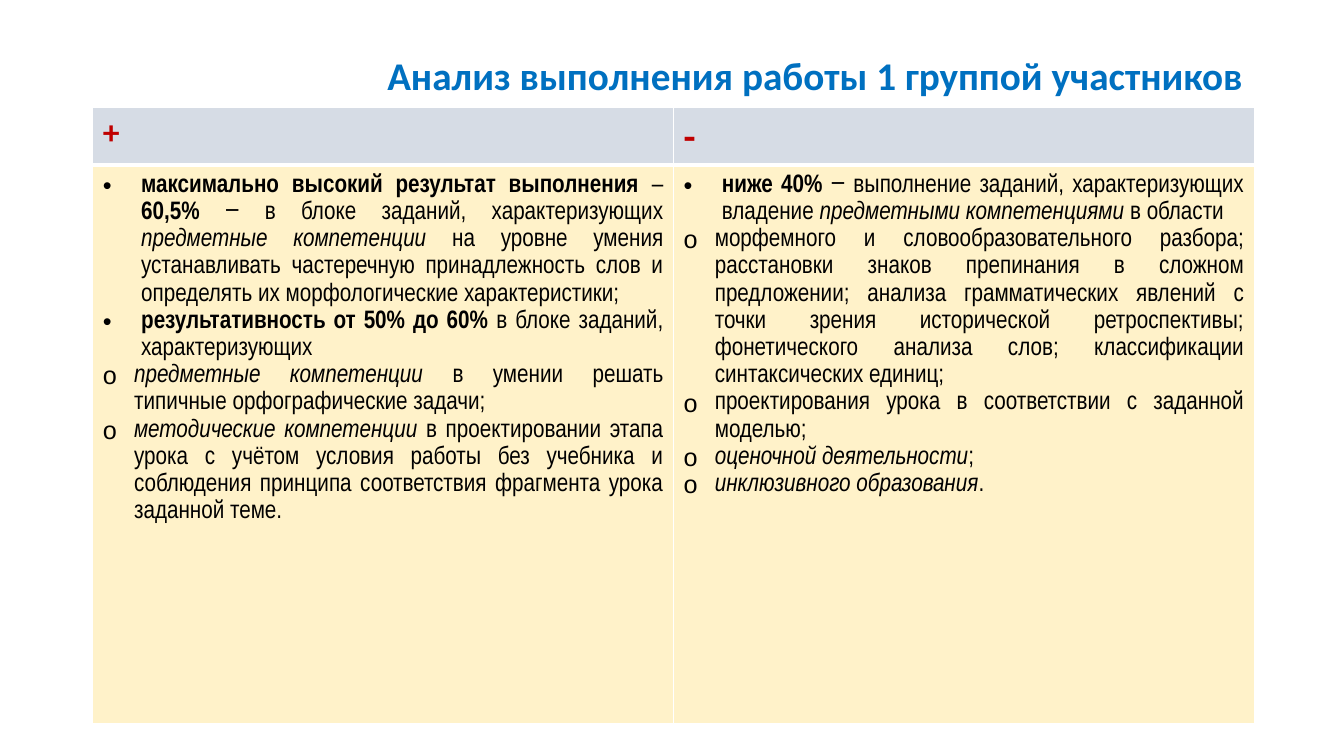
from lxml.etree import SubElement
from pptx import Presentation
from pptx.dml.color import RGBColor
from pptx.enum.text import MSO_ANCHOR, PP_ALIGN
from pptx.oxml.ns import qn
from pptx.util import Inches, Pt

COLORS = {
    "title": "0070C0",
    "sign": "C00000",
    "body": "000000",
    "header_fill": "D6DCE5",
    "body_fill": "FFF2C9",
    "border": "FFFFFF",
}
INDENTS = {"•": 0.38, "o": 0.31}
SIGNS = [("+", 24), ("-", 28)]
STRENGTHS = [
    ("•", [
        ("максимально высокий результат выполнения ", "b"),
        ("–", ""),
        (" 60,5% ", "b"),
        ("‒ в блоке заданий, характеризующих ", ""),
        ("предметные компетенции ", "i"),
        ("на уровне умения устанавливать частеречную принадлежность слов "
         "и определять их морфологические характеристики; ", ""),
    ]),
    ("•", [
        ("результативность от 50% до 60% ", "b"),
        ("в блоке заданий, характеризующих", ""),
    ]),
    ("o", [
        ("предметные компетенции", "i"),
        (" в умении решать типичные орфографические задачи; ", ""),
    ]),
    ("o", [
        ("методические компетенции", "i"),
        (" в проектировании этапа урока с учётом условия работы без учебника "
         "и соблюдения принципа соответствия фрагмента урока заданной теме. ", ""),
    ]),
]
WEAKNESSES = [
    ("•", [
        ("ниже 40%", "b"),
        (" ‒ выполнение заданий, характеризующих владение ", ""),
        ("предметными компетенциями ", "i"),
        ("в области", ""),
    ]),
    ("o", [
        ("морфемного и словообразовательного разбора; расстановки знаков "
         "препинания в сложном предложении; анализа грамматических явлений "
         "с точки зрения исторической ретроспективы; фонетического анализа "
         "слов; классификации синтаксических единиц; ", ""),
    ]),
    ("o", [("проектирования урока в соответствии с заданной моделью; ", "")]),
    ("o", [("оценочной деятельности", "i"), (";", "")]),
    ("o", [("инклюзивного образования", "i"), (".", "")]),
]


def add_run(paragraph, text, size, font, color, style=""):
    """Append a run whose style letters switch on bold and italic."""
    run = paragraph.add_run()
    run.text = text
    run.font.size = Pt(size)
    run.font.name = font
    run.font.bold = "b" in style
    run.font.italic = "i" in style
    run.font.color.rgb = RGBColor.from_string(COLORS[color])


def add_title(slide, text):
    """Place the right-aligned heading."""
    heading = slide.shapes.add_textbox(
        Inches(0.92), Inches(0.4), Inches(11.5), Inches(1.45))
    frame = heading.text_frame
    frame.word_wrap = True
    frame.vertical_anchor = MSO_ANCHOR.TOP
    frame.margin_top = Inches(0.16)
    line = frame.paragraphs[0]
    line.alignment = PP_ALIGN.RIGHT
    line.line_spacing = 0.9
    add_run(line, text, 28, "Calibri", "title", "b")


def paint_cell(cell, fill, bottom_width=1):
    """Give a cell its white borders and its fill."""
    properties = cell._tc.get_or_add_tcPr()
    widths = {"a:lnL": 1, "a:lnR": 1, "a:lnT": 1, "a:lnB": bottom_width}
    for side, width in widths.items():
        border = SubElement(properties, qn(side), w=str(Pt(width)))
        paint = SubElement(border, qn("a:solidFill"))
        SubElement(paint, qn("a:srgbClr"), val=COLORS["border"])
    cell.fill.solid()
    cell.fill.fore_color.rgb = RGBColor.from_string(COLORS[fill])


def set_bullet(paragraph, mark):
    """Hang a bullet mark in front of a paragraph."""
    properties = paragraph._p.get_or_add_pPr()
    indent = Inches(INDENTS[mark])
    properties.set("marL", str(indent))
    properties.set("indent", str(-indent))
    SubElement(properties, qn("a:buFont"), typeface="Arial")
    SubElement(properties, qn("a:buChar"), char=mark)


def fill_findings(cell, findings):
    """Write the bulleted findings into a body cell."""
    frame = cell.text_frame
    for index, (mark, pieces) in enumerate(findings):
        finding = frame.add_paragraph() if index else frame.paragraphs[0]
        finding.alignment = PP_ALIGN.JUSTIFY
        finding.line_spacing = 1.15
        set_bullet(finding, mark)
        for text, style in pieces:
            add_run(finding, text, 18, "Arial Narrow", "body", style)


def add_comparison(slide):
    """Build the table of strengths and weaknesses."""
    comparison = slide.shapes.add_table(
        2, 2, Inches(0.92), Inches(1.07), Inches(11.52), Inches(6.11)).table
    comparison.rows[0].height = Inches(0.57)
    comparison.rows[1].height = Inches(5.54)
    for column, findings in enumerate((STRENGTHS, WEAKNESSES)):
        header = comparison.cell(0, column)
        paint_cell(header, "header_fill", 3)
        sign, size = SIGNS[column]
        add_run(header.text_frame.paragraphs[0], sign, size, "Calibri", "sign", "b")
        body = comparison.cell(1, column)
        paint_cell(body, "body_fill")
        fill_findings(body, findings)


def main():
    """Create the slide and save it."""
    deck = Presentation()
    deck.slide_width = Inches(13.33)
    deck.slide_height = Inches(7.5)
    slide = deck.slides.add_slide(deck.slide_layouts[6])
    add_title(slide, "Анализ выполнения работы 1 группой участников")
    add_comparison(slide)
    deck.save("out.pptx")


if __name__ == "__main__":
    main()
